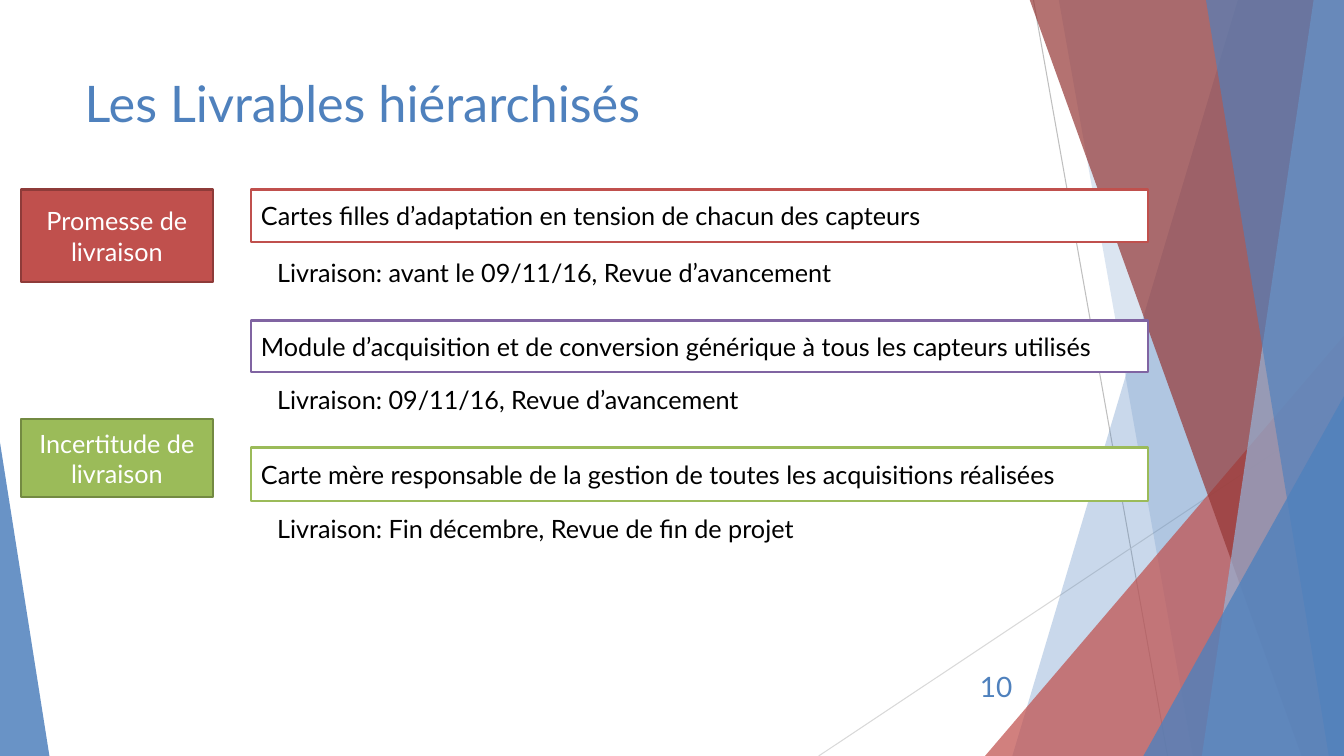
from dataclasses import dataclass
from typing import Optional, Union

import pptx
import pptx.dml.color
import pptx.enum.shapes
import pptx.enum.text
import pptx.oxml
import pptx.oxml.ns
import pptx.util
from lxml import etree

Inches = pptx.util.Inches
Pt = pptx.util.Pt
RGBColor = pptx.dml.color.RGBColor
Shape = pptx.enum.shapes.MSO_SHAPE
Align = pptx.enum.text.PP_ALIGN
Anchor = pptx.enum.text.MSO_ANCHOR
qn = pptx.oxml.ns.qn

WIDTH, HEIGHT = 13.33, 7.5
FONT = "Lato"
BLUE = RGBColor(0x4F, 0x81, 0xBD)
LIGHT_BLUE = RGBColor(0x95, 0xB3, 0xD7)
RED = RGBColor(0xC0, 0x50, 0x4D)
DARK_RED = RGBColor(0x95, 0x37, 0x35)
RED_EDGE = RGBColor(0x8E, 0x3B, 0x39)
PURPLE = RGBColor(0x80, 0x64, 0xA2)
GREEN = RGBColor(0x9B, 0xBB, 0x59)
GREEN_EDGE = RGBColor(0x73, 0x8A, 0x42)
GREY = RGBColor(0xBF, 0xBF, 0xBF)
LIGHT_GREY = RGBColor(0xD9, 0xD9, 0xD9)
BLACK = RGBColor(0, 0, 0)
WHITE = RGBColor(0xFF, 0xFF, 0xFF)


@dataclass(frozen=True)
class Ray:
    x1: float
    y1: float
    x2: float
    y2: float
    color: RGBColor


@dataclass(frozen=True)
class Band:
    top_x: float
    bottom_x: float
    color: RGBColor
    opacity: int


@dataclass(frozen=True)
class Wedge:
    left: float
    top: float
    width: float
    apex: float
    color: RGBColor
    opacity: int


@dataclass(frozen=True)
class Deliverable:
    name: str
    top: float
    height: float
    color: RGBColor
    delivery: str
    delivery_top: float
    delivery_width: float


@dataclass(frozen=True)
class Status:
    name: str
    top: float
    height: float
    color: RGBColor
    edge: RGBColor


RAYS = [
    Ray(10.25, 0, 11.58, HEIGHT, GREY),
    Ray(WIDTH, 4.03, 8.12, HEIGHT, LIGHT_GREY),
]
FACETS: list[Union[Band, Wedge]] = [
    Band(12.28, 10.04, BLUE, 30),
    Band(10.5, 11.83, BLUE, 20),
    Wedge(9.77, 3.33, 3.56, 1, RED, 72),
    Band(10.21, 12.91, DARK_RED, 70),
    Band(13.03, 11.92, LIGHT_BLUE, 70),
    Band(11.96, 13.18, BLUE, 65),
    Wedge(11.34, 3.93, 1.99, 1, BLUE, 80),
    Wedge(0, 4.39, 0.49, 0, BLUE, 85),
]
DELIVERABLES = [
    Deliverable("Cartes filles d’adaptation en tension de chacun des capteurs", 1.88, 0.52, RED,
                "Livraison: avant le 09/11/16, Revue d’avancement", 2.5, 8.19),
    Deliverable("Module d’acquisition et de conversion générique à tous les capteurs utilisés",
                3.18, 0.51, PURPLE, "Livraison: 09/11/16, Revue d’avancement", 3.76, 8.5),
    Deliverable("Carte mère responsable de la gestion de toutes les acquisitions réalisées",
                4.44, 0.53, GREEN, "Livraison: Fin décembre, Revue de fin de projet", 5.04, 8.19),
]
STATUSES = [
    Status("Promesse de livraison", 1.88, 0.92, RED, RED_EDGE),
    Status("Incertitude de livraison", 4.16, 0.77, GREEN, GREEN_EDGE),
]


def draw_ray(slide, ray: Ray) -> None:
    line = slide.shapes.add_connector(
        pptx.enum.shapes.MSO_CONNECTOR.STRAIGHT,
        Inches(ray.x1), Inches(ray.y1), Inches(ray.x2), Inches(ray.y2))
    line.line.color.rgb = ray.color
    line.line.width = Pt(0.75)
    etree.SubElement(line._element.spPr, qn("a:effectLst"))


def draw_facet(slide, facet: Union[Band, Wedge]) -> None:
    if isinstance(facet, Band):
        top = Inches(-0.01)
        right, bottom = Inches(WIDTH), Inches(HEIGHT)
        outline = slide.shapes.build_freeform(Inches(facet.top_x), top)
        outline.add_line_segments([(right, top), (right, bottom), (Inches(facet.bottom_x), bottom)])
        shape = outline.convert_to_shape()
    else:
        shape = slide.shapes.add_shape(
            Shape.ISOSCELES_TRIANGLE, Inches(facet.left), Inches(facet.top),
            Inches(facet.width), Inches(HEIGHT - facet.top))
        shape.adjustments[0] = facet.apex
    shape.shadow.inherit = False
    shape.line.fill.background()
    shape.fill.solid()
    shape.fill.fore_color.rgb = facet.color
    color = shape._element.spPr.find(qn("a:solidFill"))[0]
    etree.SubElement(color, qn("a:alpha"), val=str(facet.opacity * 1000))


def write(shape, text: str, size: float, color: RGBColor,
          align: Align = Align.LEFT, anchor: Anchor = Anchor.TOP) -> None:
    frame = shape.text_frame
    frame.word_wrap = True
    frame.vertical_anchor = anchor
    frame.text = text
    paragraph = frame.paragraphs[0]
    paragraph.alignment = align
    paragraph.font.name = FONT
    paragraph.font.size = Pt(size)
    paragraph.font.color.rgb = color


def draw_box(slide, text: str, left: float, top: float, width: float, height: float,
             fill: RGBColor, edge: RGBColor, color: RGBColor, align: Align) -> None:
    box = slide.shapes.add_shape(
        Shape.RECTANGLE, Inches(left), Inches(top), Inches(width), Inches(height))
    box.shadow.inherit = False
    box.fill.solid()
    box.fill.fore_color.rgb = fill
    box.line.color.rgb = edge
    box.line.width = Pt(1.5)
    write(box, text, 18, color, align, Anchor.MIDDLE)


def draw_note(slide, text: str, left: float, top: float, width: float, size: float = 18,
              color: RGBColor = BLACK, align: Optional[Align] = Align.LEFT,
              anchor: Anchor = Anchor.TOP) -> None:
    note = slide.shapes.add_textbox(Inches(left), Inches(top), Inches(width), Inches(0.4))
    write(note, text, size, color, align, anchor)


def main() -> None:
    deck = pptx.Presentation()
    deck.slide_width, deck.slide_height = Inches(WIDTH), Inches(HEIGHT)
    slide = deck.slides.add_slide(deck.slide_layouts[5])

    for ray in RAYS:
        draw_ray(slide, ray)
    for facet in FACETS:
        draw_facet(slide, facet)

    heading = slide.shapes.title
    heading.left, heading.top = Inches(0.74), Inches(0.67)
    heading.width, heading.height = Inches(9.4), Inches(1.44)
    write(heading, "Les Livrables hiérarchisés", 36, BLUE)
    draw_note(slide, "10", 9.39, 6.61, 0.75, 20, BLUE, Align.RIGHT, Anchor.MIDDLE)

    for item in DELIVERABLES:
        draw_box(slide, item.name, 2.49, item.top, 8.9, item.height,
                 WHITE, item.color, BLACK, Align.LEFT)
        draw_note(slide, item.delivery, 2.65, item.delivery_top, item.delivery_width)
    for status in STATUSES:
        draw_box(slide, status.name, 0.21, status.top, 1.9, status.height,
                 status.color, status.edge, WHITE, Align.CENTER)

    deck.save("out.pptx")


if __name__ == "__main__":
    main()
